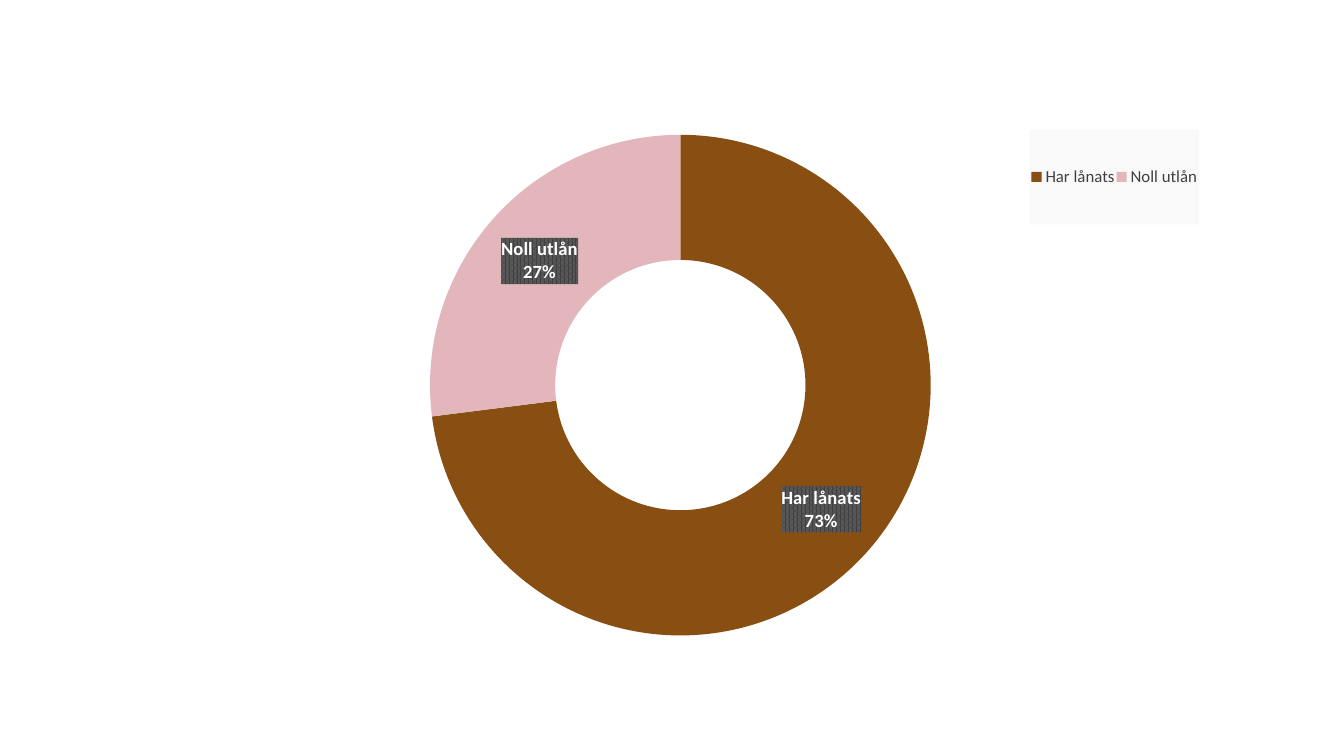
from dataclasses import dataclass

from lxml import etree
from pptx import Presentation
from pptx.chart.data import CategoryChartData as ChartData
from pptx.dml.color import RGBColor as Rgb
from pptx.enum.chart import XL_CHART_TYPE as ChartType, XL_LEGEND_POSITION as LegendPosition
from pptx.oxml import parse_xml
from pptx.oxml.ns import nsdecls, qn
from pptx.util import Pt


@dataclass(frozen=True)
class Theme:
    font: str = "Calibri"
    base_size: float = 10
    legend_size: float = 12
    label_size: float = 13.3
    black: str = "000000"
    white: str = "FFFFFF"
    dark: str = "404040"
    label_back: str = "595959"
    legend_back: str = "F9F9F9"
    loaned: str = "894E11"
    unloaned: str = "E3B6BB"


def format_font(font, name, size, color, bold=False):
    font.name, font.size, font.bold = name, Pt(size), bold
    font.color.rgb = Rgb.from_string(color)


def solid_fill(color):
    return f'<a:solidFill><a:srgbClr val="{color}"/></a:solidFill>'


def pattern_fill(front, back):
    return (f'<a:pattFill prst="pct75"><a:fgClr><a:srgbClr val="{front}"/></a:fgClr>'
            f'<a:bgClr><a:srgbClr val="{back}"/></a:bgClr></a:pattFill>')


def chart_fill(fill):
    return parse_xml(f'<c:spPr {nsdecls("c", "a")}>{fill}<a:ln><a:noFill/></a:ln></c:spPr>')


def chart_layout(x, y, w, h, inner=False):
    """Manual layout, in fractions of the chart frame."""
    layout = etree.Element(qn("c:layout"))
    manual = etree.SubElement(layout, qn("c:manualLayout"))
    settings = [("layoutTarget", "inner")] if inner else []
    settings += [("xMode", "edge"), ("yMode", "edge"), ("x", x), ("y", y), ("w", w), ("h", h)]
    for tag, value in settings:
        etree.SubElement(manual, qn(f"c:{tag}"), val=str(value))
    return layout


class SlideBuilder:
    def __init__(self, page, theme):
        self.page, self.theme = page, theme

    def doughnut(self, left, top, width, height, shares, colors):
        theme = self.theme
        data = ChartData()
        data.categories = list(shares)
        data.add_series("Series 1", list(shares.values()))
        frame = self.page.shapes.add_chart(
            ChartType.DOUGHNUT, Pt(left), Pt(top), Pt(width), Pt(height), data)
        chart = frame.chart
        chart.has_title = False
        format_font(chart.font, theme.font, theme.base_size, theme.black)

        # Ring position and slice colours
        plot = chart.plots[0]
        plot.vary_by_categories = True
        area = chart.element.xpath("c:chart/c:plotArea")[0]
        for old in area.findall(qn("c:layout")):
            area.remove(old)
        area.insert(0, chart_layout(0.26, 0.03, 0.48, 0.95, inner=True))
        series = plot.series[0]
        for index, color in enumerate(colors):
            look = series.points[index].format
            look.fill.solid()
            look.fill.fore_color.rgb = Rgb.from_string(color)
            look.line.fill.background()
        self.labels(chart, series.data_labels)
        self.legend(chart)

    def labels(self, chart, labels):
        theme = self.theme
        labels.show_category_name = labels.show_percentage = True
        labels.show_value = False
        format_font(labels.font, theme.font, theme.label_size, theme.white, bold=True)
        node = chart.element.xpath(".//c:ser/c:dLbls")[0]
        node.find(qn("c:txPr")).addprevious(
            chart_fill(pattern_fill(theme.dark, theme.label_back)))
        separator = etree.Element(qn("c:separator"))
        separator.text = "\n"
        node.xpath("c:showBubbleSize | c:showPercent")[-1].addnext(separator)

    def legend(self, chart):
        theme = self.theme
        chart.has_legend = True
        legend = chart.legend
        legend.position = LegendPosition.CORNER
        legend.include_in_layout = True
        format_font(legend.font, theme.font, theme.legend_size, theme.dark)
        node = chart.element.xpath("c:chart/c:legend")[0]
        for old in node.findall(qn("c:layout")):
            node.remove(old)
        node.find(qn("c:overlay")).addprevious(chart_layout(0.83, 0.02, 0.16, 0.18))
        node.find(qn("c:txPr")).addprevious(chart_fill(solid_fill(theme.legend_back)))


def main():
    deck = Presentation()
    deck.slide_width, deck.slide_height = Pt(960), Pt(540)
    blank_layout = deck.slide_layouts[6]
    theme = Theme()
    builder = SlideBuilder(deck.slides.add_slide(blank_layout), theme)

    # Share of the collection that has been lent
    builder.doughnut(108, 85, 756, 376.5, {"Har lånats": 73, "Noll utlån": 27},
                     [theme.loaned, theme.unloaned])
    deck.save("out.pptx")


if __name__ == "__main__":
    main()
